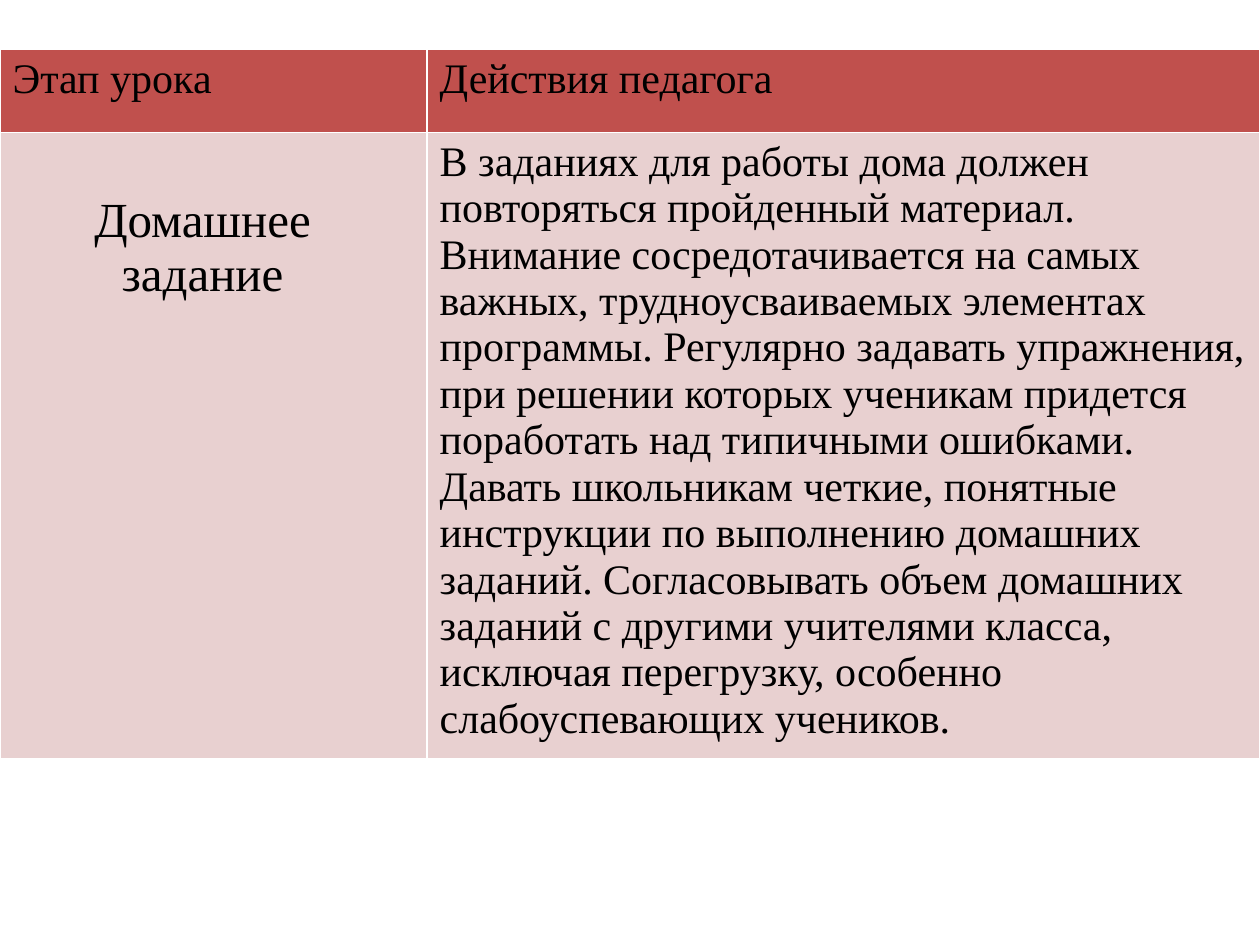
import pptx
import pptx.util
import pptx.dml.color
import pptx.enum.text
import pptx.oxml.ns
import lxml.etree

Cm = pptx.util.Cm
Pt = pptx.util.Pt


def color(hex_value):
    return pptx.dml.color.RGBColor.from_string(hex_value)


def write(cell, text, size=24, align=pptx.enum.text.PP_ALIGN.LEFT):
    para = cell.text_frame.paragraphs[0]
    para.alignment = align
    span = para.add_run()
    span.text = text
    span.font.name = "Times New Roman"
    span.font.size = Pt(size)
    span.font.bold = False
    span.font.color.rgb = color("000000")


deck = pptx.Presentation()
deck.slide_width = Cm(25.4)
deck.slide_height = Cm(19.05)
page = deck.slides.add_slide(deck.slide_layouts[6])

# Table grid
column_widths = [8.61, 16.79]
row_heights = [1.67, 12.62]
table = page.shapes.add_table(
    2, 2, Cm(0), Cm(1), Cm(sum(column_widths)), Cm(sum(row_heights))
).table
table.horz_banding = False
for column, width in zip(table.columns, column_widths):
    column.width = Cm(width)
for row, height in zip(table.rows, row_heights):
    row.height = Cm(height)

# White borders and row fills
for row, fill in zip(table.rows, ["C0504D", "E8D0D0"]):
    for cell in row.cells:
        properties = cell._tc.get_or_add_tcPr()
        for side in ["lnL", "lnR", "lnT", "lnB"]:
            line = lxml.etree.SubElement(
                properties, pptx.oxml.ns.qn("a:" + side), w=str(Pt(1)))
            paint = lxml.etree.SubElement(line, pptx.oxml.ns.qn("a:solidFill"))
            lxml.etree.SubElement(paint, pptx.oxml.ns.qn("a:srgbClr"), val="FFFFFF")
        cell.fill.solid()
        cell.fill.fore_color.rgb = color(fill)

# Header row
write(table.cell(0, 0), "Этап урока")
write(table.cell(0, 1), "Действия педагога")

# Lesson stage, set lower and slightly left of the column centre
stage = table.cell(1, 0)
stage.margin_top = Cm(1.23)
stage.margin_right = Cm(0.7)
write(stage, "Домашнее задание", size=28, align=pptx.enum.text.PP_ALIGN.CENTER)

# Teacher's actions
write(
    table.cell(1, 1),
    "В заданиях для работы дома должен повторяться пройденный материал. "
    "Внимание сосредотачивается на самых важных, трудноусваиваемых элементах "
    "программы. Регулярно задавать упражнения, при решении которых ученикам "
    "придется поработать над типичными ошибками. Давать школьникам четкие, "
    "понятные инструкции по выполнению домашних заданий. Согласовывать объем "
    "домашних заданий с другими учителями класса, исключая перегрузку, "
    "особенно слабоуспевающих учеников.",
)

deck.save("out.pptx")
